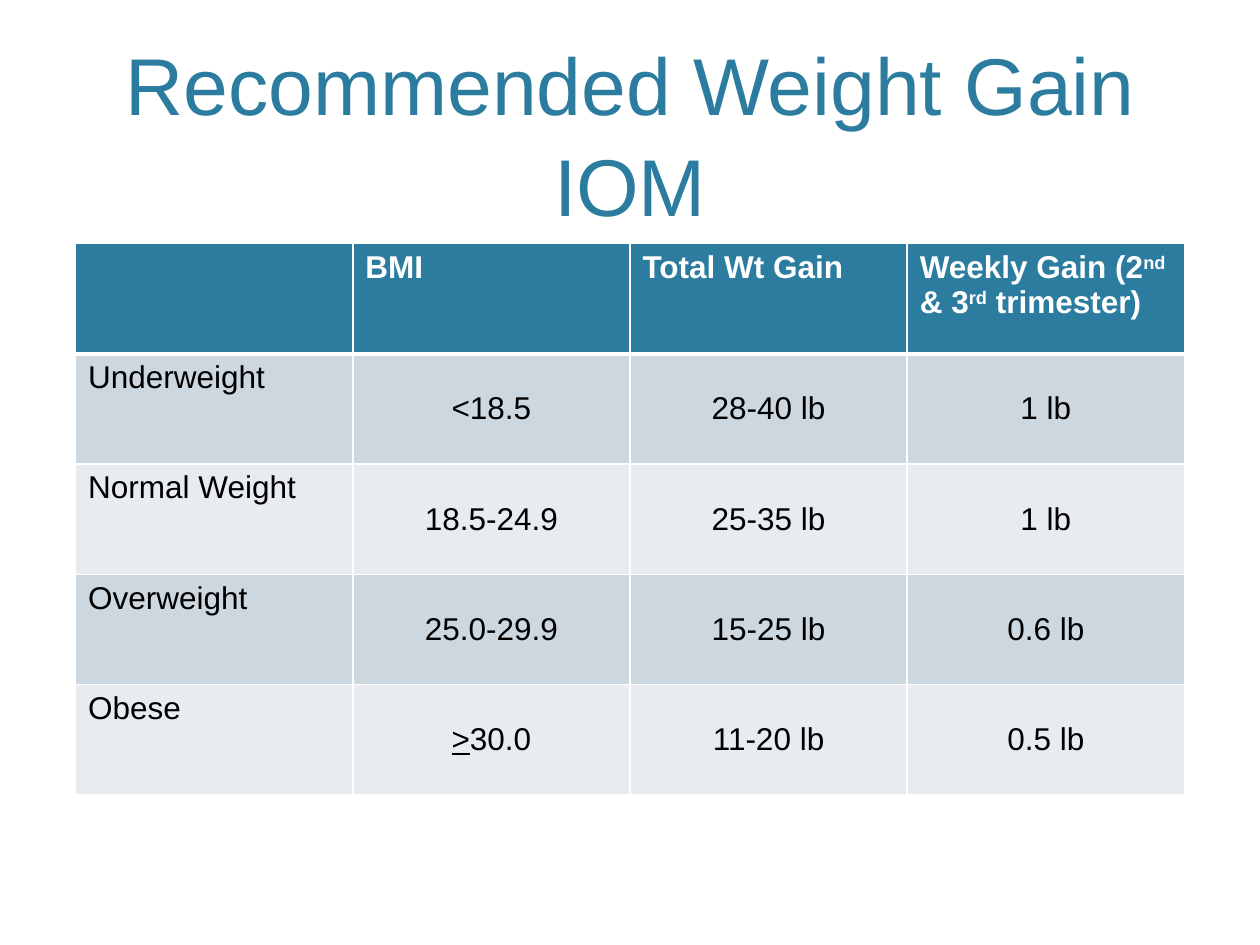
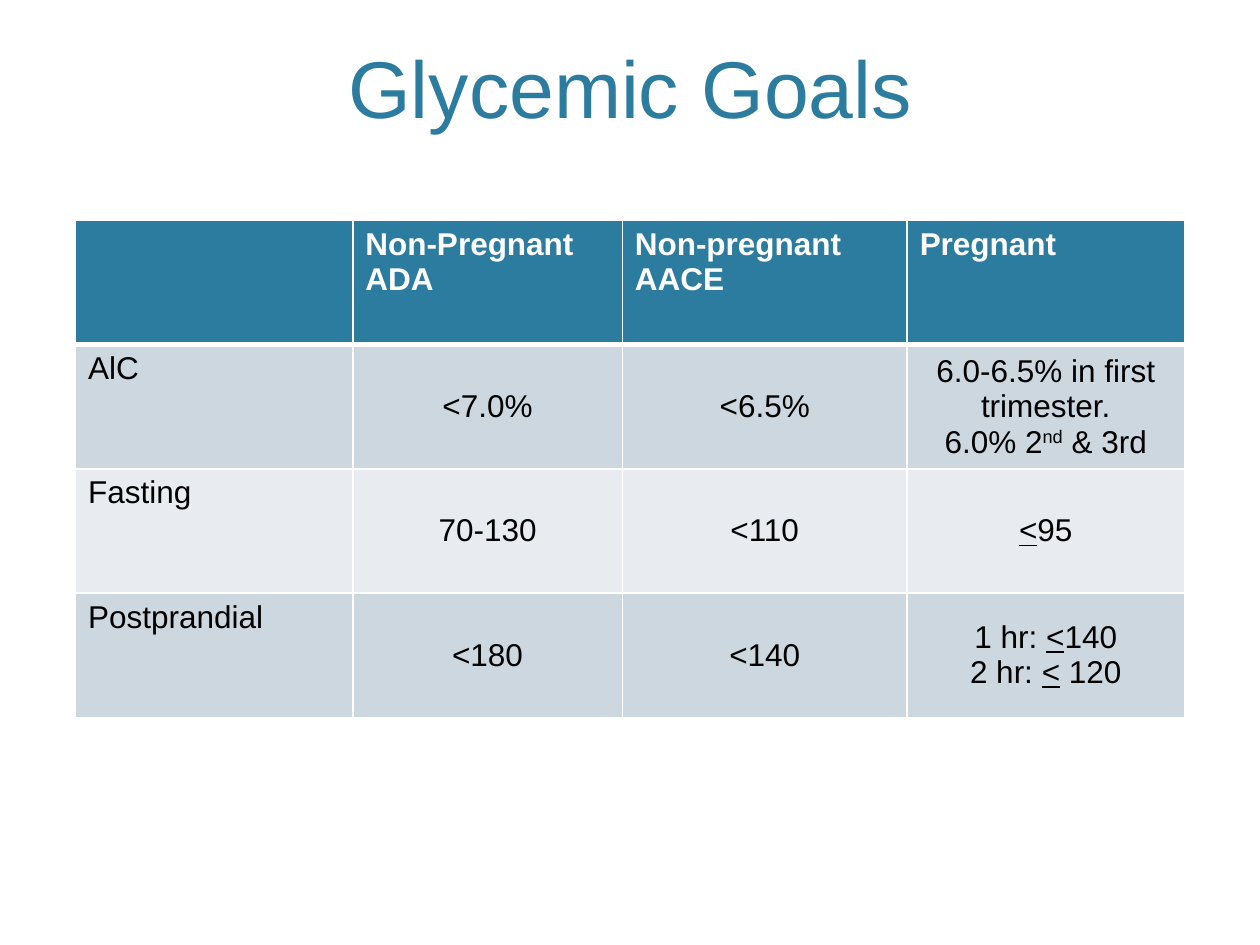
from lxml import etree
from pptx import Presentation
from pptx.dml.color import RGBColor
from pptx.enum.text import MSO_ANCHOR, PP_ALIGN
from pptx.oxml.ns import qn
from pptx.util import Pt

CENTER, LEFT = PP_ALIGN.CENTER, PP_ALIGN.LEFT
TOP, MIDDLE, BOTTOM = MSO_ANCHOR.TOP, MSO_ANCHOR.MIDDLE, MSO_ANCHOR.BOTTOM

FONT = "Arial"
TEAL, WHITE, BLACK = "2C7C9F", "FFFFFF", "000000"
BANDS = ("CDD7DF", "E8ECF0")
MARGIN, CONTENT_W, TITLE_H = 43.2, 633.6, 105
TITLE_ONLY = 5

# In cell text "|" separates runs; a run starting with "^" is raised, with "_" underlined.
WEIGHT_GAIN = [
    ["", "BMI", "Total Wt Gain", "Weekly Gain (2|^nd| & 3|^rd| trimester)"],
    ["Underweight", "<18.5", "28-40 lb", "1 lb"],
    ["Normal Weight", "18.5-24.9", "25-35 lb", "1 lb"],
    ["Overweight", "25.0-29.9", "15-25 lb", "0.6 lb"],
    ["Obese", "_>|30.0", "11-20 lb", "0.5 lb"],
]
GLYCEMIC_GOALS = [
    ["", "Non-Pregnant\nADA", "Non-pregnant\nAACE", "Pregnant"],
    ["AlC", "<7.0%", "<6.5%",
     "6.0-6.5% in first trimester.\n6.0% 2|^nd| & 3rd"],
    ["Fasting", "70-130", "<110", "_<|95"],
    ["Postprandial", "<180", "<140", "1 hr: |_<|140\n2 hr: |_<| 120"],
]


def rgb(value):
    return RGBColor.from_string(value)


def style_font(font, size, color, bold=False):
    font.name, font.size, font.bold = FONT, Pt(size), bold
    font.color.rgb = rgb(color)


def add_title_slide(prs, text, top, bottom_inset=3.6):
    s = prs.slides.add_slide(prs.slide_layouts[TITLE_ONLY])
    title = s.shapes.title
    title.left, title.top = Pt(MARGIN), Pt(top)
    title.width, title.height = Pt(CONTENT_W), Pt(TITLE_H)
    tf = title.text_frame
    tf.text = text
    tf.word_wrap = True
    tf.vertical_anchor = BOTTOM
    tf.margin_bottom = Pt(bottom_inset)
    p = tf.paragraphs[0]
    p.alignment, p.line_spacing = CENTER, 1.05
    for r in p.runs:
        style_font(r.font, 46, TEAL)
    return s


def add_runs(p, marked_text, color, bold):
    for part in filter(None, marked_text.split("|")):
        r = p.add_run()
        r.text = part.lstrip("^_")
        style_font(r.font, 18, color, bold)
        if part.startswith("_"):
            r.font.underline = True
        elif part.startswith("^"):
            r.font._element.set("baseline", "30000")


def set_borders(cell, top, bottom):
    """Draw white cell borders; top and bottom are widths in points."""
    tc_pr = cell._tc.get_or_add_tcPr()
    for side, width in (("L", 1), ("R", 1), ("T", top), ("B", bottom)):
        ln = etree.SubElement(tc_pr, qn(f"a:ln{side}"), w=str(Pt(width)))
        fill = etree.SubElement(ln, qn("a:solidFill"))
        etree.SubElement(fill, qn("a:srgbClr"), val=WHITE)


def fill_cell(cell, text, row, col):
    header = row == 0
    centered = not header and col > 0
    set_borders(cell, top=3 if row == 1 else 1, bottom=3 if header else 1)
    cell.fill.solid()
    cell.fill.fore_color.rgb = rgb(TEAL if header else BANDS[(row - 1) % 2])
    cell.vertical_anchor = MIDDLE if centered else TOP
    tf = cell.text_frame
    for i, line in enumerate(text.split("\n")):
        p = tf.add_paragraph() if i else tf.paragraphs[0]
        p.alignment = CENTER if centered else LEFT
        add_runs(p, line, WHITE if header else BLACK, header)


def add_grid(s, rows, top, row_h, col_widths):
    frame = s.shapes.add_table(len(rows), len(col_widths), Pt(MARGIN), Pt(top),
                               Pt(CONTENT_W), Pt(row_h * len(rows)))
    table = frame.table
    table.horz_banding = False
    for column, width in zip(table.columns, col_widths):
        column.width = Pt(width)
    for i, row in enumerate(rows):
        table.rows[i].height = Pt(row_h)
        for j, text in enumerate(row):
            fill_cell(table.cell(i, j), text, i, j)


def main():
    prs = Presentation()
    prs.slide_width, prs.slide_height = Pt(720), Pt(540)

    s = add_title_slide(prs, "Recommended Weight Gain\vIOM", 31.7)
    add_grid(s, WEIGHT_GAIN, 139.2, 63, [CONTENT_W / 4] * 4)

    s = add_title_slide(prs, "Glycemic Goals", 8.6, bottom_inset=36.5)
    add_grid(s, GLYCEMIC_GOALS, 126, 71, [158.4, 154, 162.8, 158.4])

    prs.save("out.pptx")


if __name__ == "__main__":
    main()
